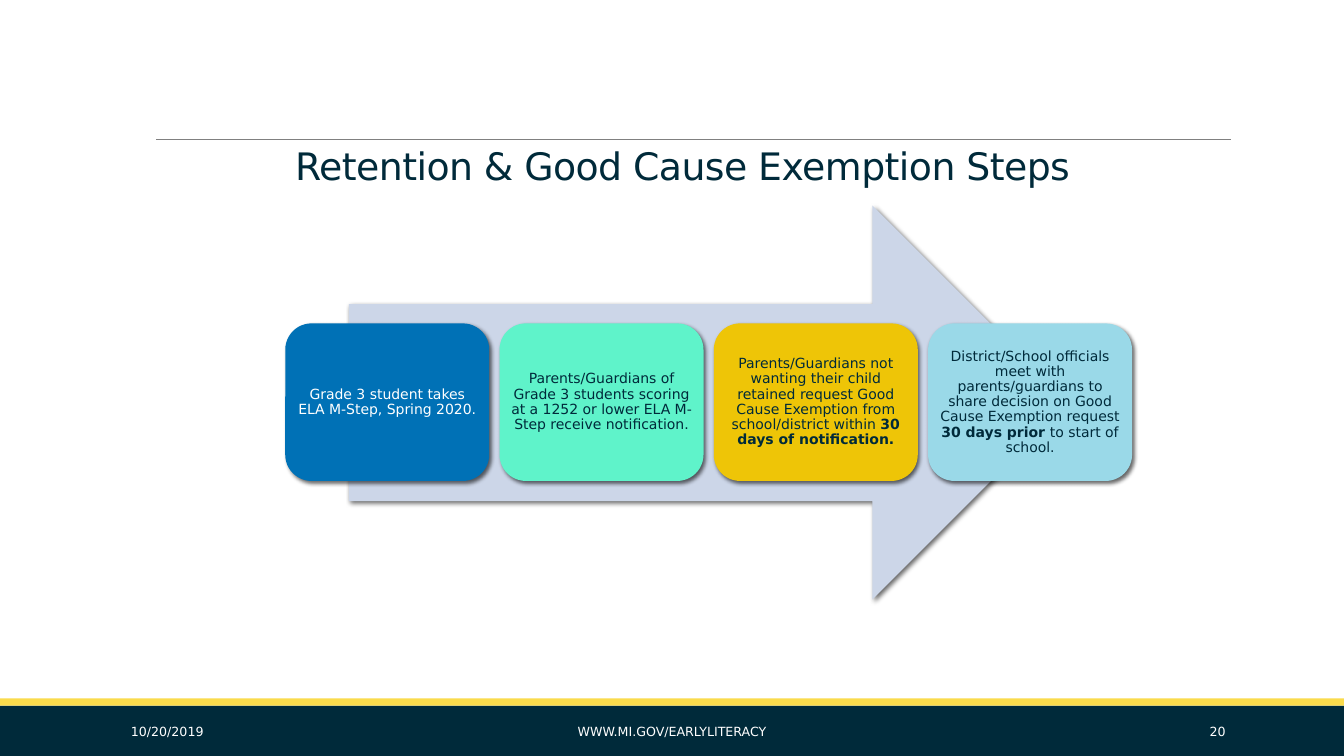
from dataclasses import dataclass

from lxml import etree
from pptx import Presentation
from pptx.dml.color import RGBColor
from pptx.enum.shapes import MSO_CONNECTOR, MSO_SHAPE
from pptx.enum.text import MSO_ANCHOR, PP_ALIGN
from pptx.oxml.ns import qn
from pptx.util import Cm, Pt

RECTANGLE = MSO_SHAPE.RECTANGLE
ROUNDED = MSO_SHAPE.ROUNDED_RECTANGLE
ARROW = MSO_SHAPE.RIGHT_ARROW
STRAIGHT = MSO_CONNECTOR.STRAIGHT
MIDDLE, BOTTOM = MSO_ANCHOR.MIDDLE, MSO_ANCHOR.BOTTOM
LEFT, CENTER, RIGHT = PP_ALIGN.LEFT, PP_ALIGN.CENTER, PP_ALIGN.RIGHT


@dataclass(frozen=True)
class Theme:
    """Colours, font and type sizes of the slide."""

    navy: str = "002A3A"
    gold: str = "FADB4C"
    grey: str = "808080"
    white: str = "FFFFFF"
    arrow: str = "CCD6E8"
    blue: str = "0071B6"
    mint: str = "5FF3CA"
    mustard: str = "EEC507"
    sky: str = "9AD9E8"
    shadow: str = "000000"
    font: str = "DejaVu Sans"
    title_size: float = 27
    card_size: float = 10
    footer_size: float = 9


THEME = Theme()

STEPS = [
    (THEME.blue, THEME.white, [("Grade 3 student takes ELA M-Step, Spring 2020.", False)]),
    (THEME.mint, THEME.navy, [
        ("Parents/Guardians of Grade 3 students scoring at a 1252 or lower ELA "
         "M-Step receive notification.", False)]),
    (THEME.mustard, THEME.navy, [
        ("Parents/Guardians not wanting their child retained request Good Cause "
         "Exemption from school/district within ", False),
        ("30 days of notification.", True)]),
    (THEME.sky, THEME.navy, [
        ("District/School officials meet with parents/guardians to share decision "
         "on Good Cause Exemption request ", False),
        ("30 days prior ", True),
        ("to start of school.", False)]),
]

FOOTERS = [
    (3.05, 6.86, "10/20/2019", LEFT),
    (10.24, 13.39, "WWW.MI.GOV/EARLYLITERACY", CENTER),
    (27.51, 3.63, "20", RIGHT),
]


def add_block(page, kind, left, top, width, height, color):
    """Add a filled preset shape without outline or shadow."""
    block = page.shapes.add_shape(kind, Cm(left), Cm(top), Cm(width), Cm(height))
    block.shadow.inherit = False
    block.fill.solid()
    block.fill.fore_color.rgb = RGBColor.from_string(color)
    block.line.fill.background()
    return block


def cast_shadow(block):
    """Give a shape a soft shadow towards the lower right."""
    effects = block.element.spPr.find(qn("a:effectLst"))
    shadow = etree.SubElement(effects, qn("a:outerShdw"), blurRad=str(Pt(3)),
                              dist=str(Pt(2)), dir="2700000", rotWithShape="0")
    color = etree.SubElement(shadow, qn("a:srgbClr"), val=THEME.shadow)
    etree.SubElement(color, qn("a:alpha"), val="60000")


def write_text(box, spans, size, color, align, anchor=MIDDLE, line_spacing=1.0):
    """Write one paragraph of (text, bold) spans into a shape."""
    frame = box.text_frame
    frame.word_wrap = True
    frame.vertical_anchor = anchor
    para = frame.paragraphs[0]
    para.alignment = align
    para.line_spacing = line_spacing
    para.font.name = THEME.font
    para.font.size = Pt(size)
    para.font.color.rgb = RGBColor.from_string(color)
    for text, bold in spans:
        span = para.add_run()
        span.text = text
        if bold:
            span.font.bold = True
    return para


def add_frame(page):
    """Add the footer band, its gold edge and the upper rule."""
    add_block(page, RECTANGLE, 0, 17.78, 33.87, 1.27, THEME.navy)
    add_block(page, RECTANGLE, 0, 17.6, 33.87, 0.18, THEME.gold)
    rule = page.shapes.add_connector(STRAIGHT, Cm(3.94), Cm(3.51), Cm(31.01), Cm(3.51))
    rule.line.color.rgb = RGBColor.from_string(THEME.grey)
    rule.line.width = Pt(0.5)
    etree.SubElement(rule.element.spPr, qn("a:effectLst"))


def add_title(page, text):
    """Add the slide title with slightly tightened letters."""
    box = page.shapes.add_textbox(Cm(7.19), Cm(3.02), Cm(20.29), Cm(1.85))
    para = write_text(box, [(text, False)], THEME.title_size, THEME.navy,
                      LEFT, BOTTOM, 0.85)
    para.runs[0].font._element.set("spc", "-40")


def add_step(page, index, fill, color, spans):
    """Add one step card at its place in the row."""
    card = add_block(page, ROUNDED, 7.19 + 5.4 * index, 8.15, 5.14, 3.97, fill)
    cast_shadow(card)
    frame = card.text_frame
    frame.margin_left = frame.margin_right = Cm(0.1)
    frame.margin_top = frame.margin_bottom = Cm(0.1)
    write_text(card, spans, THEME.card_size, color, CENTER, line_spacing=0.9)


def add_footer(page, left, width, text, align):
    """Add one text of the footer band."""
    box = page.shapes.add_textbox(Cm(left), Cm(17.93), Cm(width), Cm(1.02))
    write_text(box, [(text, False)], THEME.footer_size, THEME.white, align)


def main():
    """Build the slide and save the deck."""
    deck = Presentation()
    deck.slide_width, deck.slide_height = Cm(33.87), Cm(19.05)
    page = deck.slides.add_slide(deck.slide_layouts[6])
    add_frame(page)
    add_title(page, "Retention & Good Cause Exemption Steps")
    cast_shadow(add_block(page, ARROW, 8.79, 5.18, 18.16, 9.93, THEME.arrow))
    for index, step in enumerate(STEPS):
        add_step(page, index, *step)
    for footer in FOOTERS:
        add_footer(page, *footer)
    deck.save("out.pptx")


if __name__ == "__main__":
    main()
